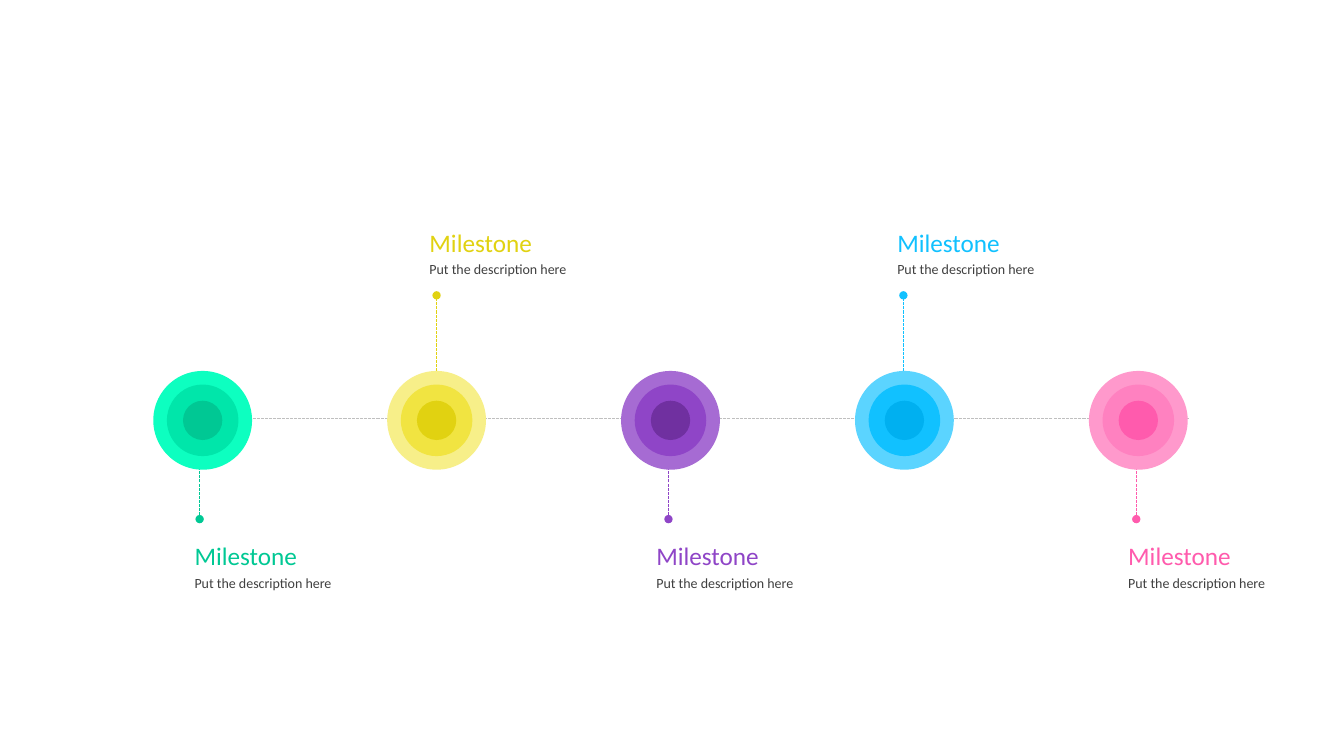
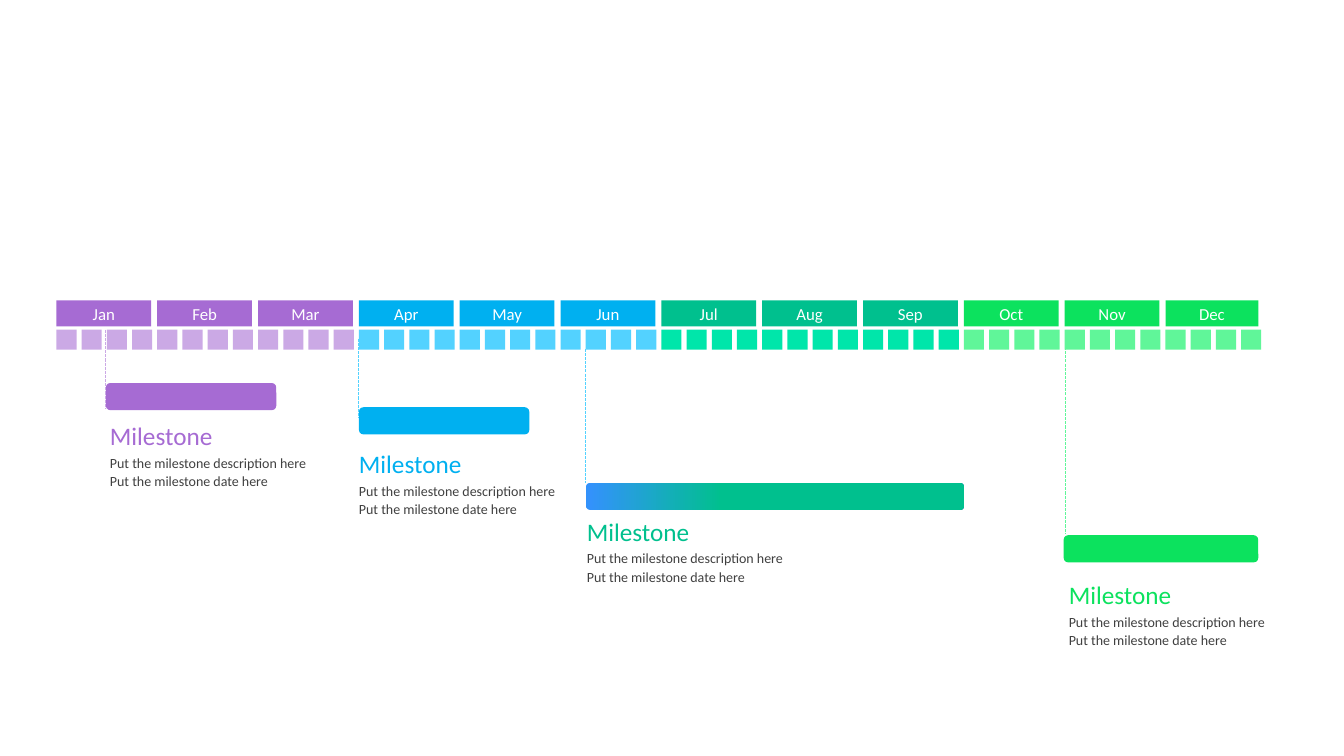
from lxml import etree
from pptx import Presentation
from pptx.dml.color import RGBColor
from pptx.enum.dml import MSO_LINE_DASH_STYLE as Dash
from pptx.enum.shapes import MSO_CONNECTOR, MSO_SHAPE as Shape
from pptx.enum.text import MSO_ANCHOR, PP_ALIGN
from pptx.oxml.ns import qn
from pptx.util import Inches, Pt

FONT = "Calibri"
BLANK_LAYOUT = 6

WHITE = RGBColor(0xFF, 0xFF, 0xFF)
TEXT_GRAY = RGBColor(0x40, 0x40, 0x40)
AXIS_GRAY = RGBColor(0xBF, 0xBF, 0xBF)

MINT = RGBColor(0x0D, 0xFF, 0xC0)
TEAL_LIGHT = RGBColor(0x00, 0xE6, 0xAA)
TEAL = RGBColor(0x00, 0xC8, 0x94)
TEAL_DARK = RGBColor(0x00, 0xC0, 0x8E)
YELLOW_PALE = RGBColor(0xF7, 0xEF, 0x89)
YELLOW = RGBColor(0xF1, 0xE4, 0x41)
GOLD = RGBColor(0xE1, 0xD2, 0x11)
LILAC = RGBColor(0xCB, 0xA9, 0xE5)
PURPLE_LIGHT = RGBColor(0xA6, 0x6B, 0xD3)
PURPLE = RGBColor(0x8F, 0x45, 0xC7)
PURPLE_DARK = RGBColor(0x70, 0x30, 0xA0)
SKY_PALE = RGBColor(0x5B, 0xD4, 0xFF)
SKY_LIGHT = RGBColor(0x53, 0xD2, 0xFF)
SKY = RGBColor(0x11, 0xC1, 0xFF)
BLUE = RGBColor(0x00, 0xB0, 0xF0)
BLUE_DEEP = RGBColor(0x33, 0x92, 0xFB)
PINK_PALE = RGBColor(0xFF, 0x99, 0xCC)
PINK_LIGHT = RGBColor(0xFF, 0x81, 0xC0)
PINK = RGBColor(0xFF, 0x5B, 0xAD)
GREEN_LIGHT = RGBColor(0x60, 0xF6, 0x99)
GREEN = RGBColor(0x0C, 0xE2, 0x5E)

RING_DIAMETERS = (0.98, 0.71, 0.39)
RING_START, RING_STEP, RING_MIDDLE = 2.01, 2.32, 4.17
STEM_LENGTH = 0.79
STEM_TOP_ABOVE, STEM_TOP_BELOW = 2.93, 4.36
LABEL_TOP_ABOVE, LABEL_TOP_BELOW = 2.25, 5.36

MONTHS = ("Jan", "Feb", "Mar", "Apr", "May", "Jun",
          "Jul", "Aug", "Sep", "Oct", "Nov", "Dec")
QUARTERS = ((PURPLE_LIGHT, LILAC), (BLUE, SKY_LIGHT),
            (TEAL_DARK, TEAL_LIGHT), (GREEN, GREEN_LIGHT))
YEAR_LEFT, MONTH_STEP, WEEK_STEP = 0.56, 1, 0.25
MONTH_TOP, MONTH_WIDTH, MONTH_HEIGHT = 2.98, 0.94, 0.26
WEEK_TOP, WEEK_SIZE = 3.27, 0.2
BAR_HEIGHT = 0.27


def add_block(page, kind, left, top, width, height, color):
    block = page.shapes.add_shape(
        kind, Inches(left), Inches(top), Inches(width), Inches(height))
    block.shadow.inherit = False
    block.fill.solid()
    block.fill.fore_color.rgb = color
    block.line.fill.background()
    return block


def add_dashed_line(page, start, end, color, dots=False):
    line = page.shapes.add_connector(
        MSO_CONNECTOR.STRAIGHT, *(Inches(value) for value in start + end))
    line.line.color.rgb = color
    line.line.width = Pt(0.75)
    line.line.dash_style = Dash.SQUARE_DOT
    if dots:
        outline = line.line._get_or_add_ln()
        for tag in ("a:headEnd", "a:tailEnd"):
            etree.SubElement(outline, qn(tag), type="oval")
    etree.SubElement(line._element.spPr, qn("a:effectLst"))


def format_paragraph(para, size, color):
    para.font.name = FONT
    para.font.size = Pt(size)
    para.font.color.rgb = color


def add_label(page, left, top, width, color, details):
    box = page.shapes.add_textbox(
        Inches(left), Inches(top), Inches(width),
        Inches(0.34 + 0.18 * len(details)))
    frame = box.text_frame
    frame.word_wrap = True
    frame.margin_left = frame.margin_right = 0
    frame.margin_top = frame.margin_bottom = 0
    heading = frame.paragraphs[0]
    heading.text = "Milestone"
    format_paragraph(heading, 18, color)
    for index, detail in enumerate(details):
        para = frame.add_paragraph()
        para.text = detail
        para.space_before = Pt(1 if index else 2.5)
        format_paragraph(para, 10, TEXT_GRAY)


def add_rings(page, center, colors):
    for diameter, color in zip(RING_DIAMETERS, colors):
        add_block(page, Shape.OVAL, center - diameter / 2,
                  RING_MIDDLE - diameter / 2, diameter, diameter, color)


def add_month(page, index, name):
    dark, light = QUARTERS[index // 3]
    left = YEAR_LEFT + index * MONTH_STEP
    width = 0.92 if index == len(MONTHS) - 1 else MONTH_WIDTH
    header = add_block(page, Shape.RECTANGLE, left, MONTH_TOP,
                       width, MONTH_HEIGHT, dark)
    header.text_frame.vertical_anchor = MSO_ANCHOR.MIDDLE
    para = header.text_frame.paragraphs[0]
    para.text = name
    para.alignment = PP_ALIGN.CENTER
    format_paragraph(para, 12, WHITE)
    for week in range(4):
        add_block(page, Shape.RECTANGLE, left + week * WEEK_STEP, WEEK_TOP,
                  WEEK_SIZE, WEEK_SIZE, light)


def blend_bar(bar, start, end):
    bar.fill.gradient()
    bar.fill.gradient_angle = 0
    for stop, (position, color) in zip(bar.fill.gradient_stops,
                                       ((0.01, start), (0.36, end))):
        stop.position = position
        stop.color.rgb = color


def build_ring_timeline(page):
    add_dashed_line(page, (11.79, 4.15), (1.55, 4.15), AXIS_GRAY)
    milestones = (
        ((MINT, TEAL_LIGHT, TEAL), TEAL, 1.98, 1.93),
        ((YELLOW_PALE, YELLOW, GOLD), GOLD, 4.33, 4.26),
        ((PURPLE_LIGHT, PURPLE, PURPLE_DARK), PURPLE, 6.63, 6.51),
        ((SKY_PALE, SKY, BLUE), SKY, 8.96, 8.9),
        ((PINK_PALE, PINK_LIGHT, PINK), PINK, 11.27, 11.19),
    )
    for index, (rings, color, stem, label_left) in enumerate(milestones):
        above = index % 2 == 1
        stem_top = STEM_TOP_ABOVE if above else STEM_TOP_BELOW
        label_top = LABEL_TOP_ABOVE if above else LABEL_TOP_BELOW
        add_dashed_line(page, (stem, stem_top + STEM_LENGTH),
                        (stem, stem_top), color, dots=True)
        add_rings(page, RING_START + index * RING_STEP, rings)
        add_label(page, label_left, label_top, 1.66, color,
                  ("Put the description here",))


def build_year_plan(page):
    for index, name in enumerate(MONTHS):
        add_month(page, index, name)
    milestones = (
        (PURPLE_LIGHT, (1.05, 3.8, 1.69), (1.09, 4.17),
         LILAC, (1.05, 3.27, 4.06)),
        (BLUE, (3.56, 4.04, 1.69), (3.56, 4.45),
         SKY_LIGHT, (3.56, 3.36, 4.15)),
        (TEAL_DARK, (5.81, 4.79, 3.75), (5.82, 5.12),
         SKY_LIGHT, (5.81, 3.46, 4.79)),
        (GREEN, (10.55, 5.31, 1.93), (10.6, 5.75),
         GREEN_LIGHT, (10.57, 3.32, 5.29)),
    )
    for color, bar_area, label_at, line_color, (x, top, bottom) in milestones:
        bar = add_block(page, Shape.ROUNDED_RECTANGLE, *bar_area,
                        BAR_HEIGHT, color)
        if color == TEAL_DARK:
            blend_bar(bar, BLUE_DEEP, TEAL_DARK)
        add_dashed_line(page, (x, top), (x, bottom), line_color)
        add_label(page, *label_at, 2.22, color,
                  ("Put the milestone description here",
                   "Put the milestone date here"))


def main():
    deck = Presentation()
    deck.slide_width = Inches(13.33)
    deck.slide_height = Inches(7.5)
    for build in (build_ring_timeline, build_year_plan):
        build(deck.slides.add_slide(deck.slide_layouts[BLANK_LAYOUT]))
    deck.save("out.pptx")


if __name__ == "__main__":
    main()
